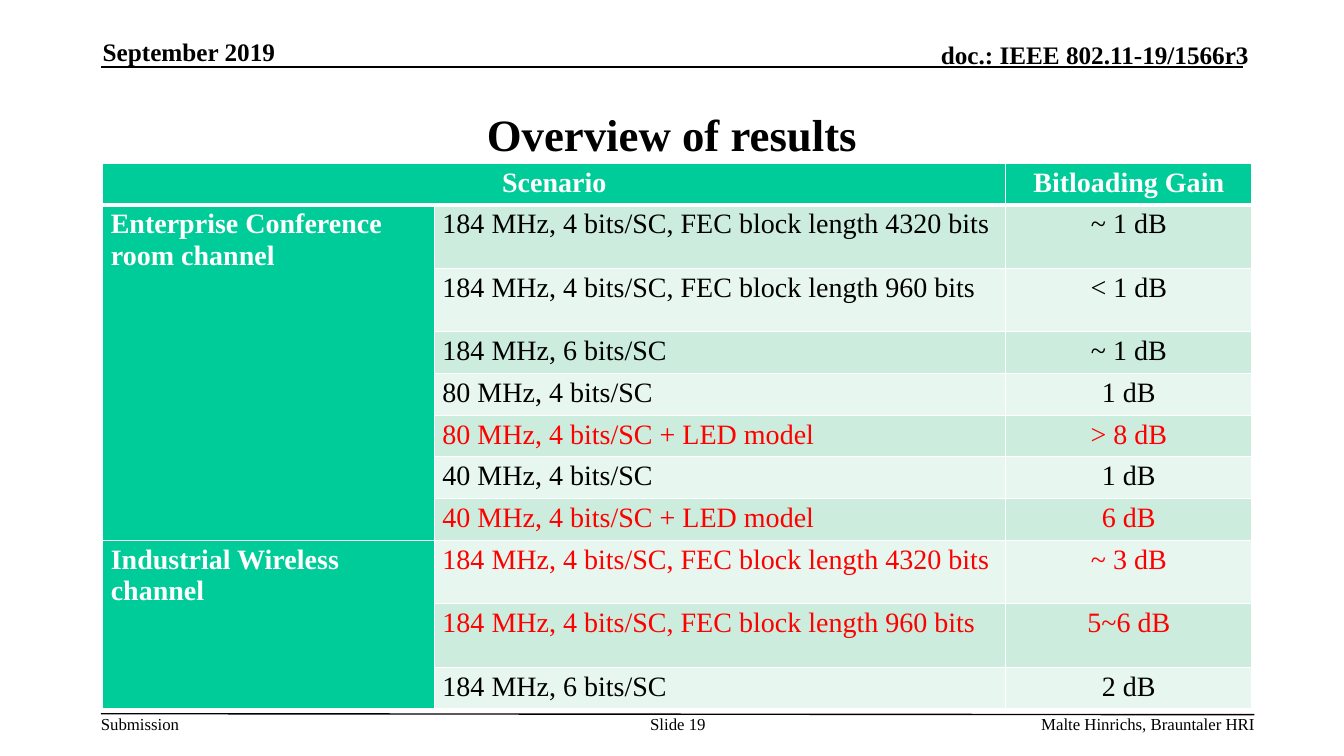
from lxml.etree import SubElement
from pptx import Presentation
from pptx.dml.color import RGBColor
from pptx.enum.shapes import MSO_CONNECTOR
from pptx.enum.text import MSO_ANCHOR, PP_ALIGN
from pptx.oxml.ns import qn
from pptx.util import Pt

FONT = "Times New Roman"
BLACK, WHITE, RED = "000000", "FFFFFF", "FF0000"
GREEN, BANDS = "00CC99", ("E7F6EF", "CCECDE")
LEFT, MID, RIGHT = PP_ALIGN.LEFT, PP_ALIGN.CENTER, PP_ALIGN.RIGHT
LOW, TALL = 27.9, 45.36
WIDTHS = (236.9, 408.2, 175.7)
LONG = "184 MHz, 4 bits/SC, FEC block length 4320 bits"
SHORT = "184 MHz, 4 bits/SC, FEC block length 960 bits"
GROUPS = (
    ("Enterprise Conference room channel", (
        (LONG, "~ 1 dB", BLACK, TALL),
        (SHORT, "< 1 dB", BLACK, TALL),
        ("184 MHz, 6 bits/SC", "~ 1 dB", BLACK, LOW),
        ("80 MHz, 4 bits/SC", "1 dB", BLACK, LOW),
        ("80 MHz, 4 bits/SC + LED model", "> 8 dB", RED, LOW),
        ("40 MHz, 4 bits/SC", "1 dB", BLACK, LOW),
        ("40 MHz, 4 bits/SC + LED model", "6 dB", RED, LOW),
    )),
    ("Industrial Wireless channel", (
        (LONG, "~ 3 dB", RED, TALL),
        (SHORT, "5~6 dB", RED, TALL),
        ("184 MHz, 6 bits/SC", "2 dB", BLACK, LOW),
    )),
)


def color(code):
    return RGBColor.from_string(code)


def write(frame, text, size, align=LEFT, bold=False, ink=BLACK):
    para = frame.paragraphs[0]
    para.alignment = align
    run = para.add_run()
    run.text = text
    run.font.name = FONT
    run.font.size = Pt(size)
    run.font.bold = bold
    run.font.color.rgb = color(ink)


def label(slide, text, area, size, align=LEFT, bold=False, anchor=MSO_ANCHOR.TOP):
    frame = slide.shapes.add_textbox(*map(Pt, area)).text_frame
    frame.word_wrap = True
    frame.vertical_anchor = anchor
    frame.margin_left = frame.margin_right = 0
    frame.margin_top = frame.margin_bottom = 0
    write(frame, text, size, align, bold)


def rule(slide, *ends):
    line = slide.shapes.add_connector(MSO_CONNECTOR.STRAIGHT, *map(Pt, ends))
    line.line.color.rgb = color(BLACK)
    line.line.width = Pt(1)
    SubElement(line._element.spPr, qn("a:effectLst"))


def border(cell, base):
    props = cell._tc.get_or_add_tcPr()
    for side, width in (("L", 1), ("R", 1), ("T", 1), ("B", base)):
        edge = SubElement(props, qn("a:ln" + side), w=str(Pt(width)))
        fill = SubElement(edge, qn("a:solidFill"))
        SubElement(fill, qn("a:srgbClr"), val=WHITE)


def paint(cell, fill, base=1):
    cell.margin_left = cell.margin_right = Pt(5.76)
    cell.margin_top = cell.margin_bottom = Pt(2.88)
    border(cell, base)
    cell.fill.solid()
    cell.fill.fore_color.rgb = color(fill)


def results(slide):
    rows = [row for name, part in GROUPS for row in part]
    highs = [LOW] + [row[3] for row in rows]
    area = map(Pt, (73.4, 116.6, sum(WIDTHS), sum(highs)))
    table = slide.shapes.add_table(len(highs), len(WIDTHS), *area).table
    table.first_row = table.horz_banding = False
    for col, width in zip(table.columns, WIDTHS):
        col.width = Pt(width)
    for row, high in zip(table.rows, highs):
        row.height = Pt(high)

    for col in range(3):
        paint(table.cell(0, col), GREEN, 3)
    table.cell(0, 0).merge(table.cell(0, 1))
    for col, text in ((0, "Scenario"), (2, "Bitloading Gain")):
        write(table.cell(0, col).text_frame, text, 20, MID, True, WHITE)

    for num, (case, gain, ink, high) in enumerate(rows, 1):
        paint(table.cell(num, 0), GREEN)
        for col, text, align in ((1, case, LEFT), (2, gain, MID)):
            cell = table.cell(num, col)
            paint(cell, BANDS[num % 2])
            write(cell.text_frame, text, 20, align, ink=ink)

    top = 1
    for name, part in GROUPS:
        head = table.cell(top, 0)
        head.merge(table.cell(top + len(part) - 1, 0))
        write(head.text_frame, name, 20, bold=True, ink=WHITE)
        top += len(part)


def main():
    deck = Presentation()
    deck.slide_width, deck.slide_height = Pt(960), Pt(540)
    slide = deck.slides.add_slide(deck.slide_layouts[6])
    low = MSO_ANCHOR.BOTTOM
    rule(slide, 72, 48, 888, 48)
    rule(slide, 72, 509.8, 896, 510.5)
    label(slide, "September 2019", (73.4, 26, 196.6, 21.6), 18, LEFT, True, low)
    label(slide, "doc.: IEEE 802.11-19/1566r3", (525, 28, 367, 21.6), 18, RIGHT, True, low)
    label(slide, "Overview of results", (72, 54, 816, 83.5), 32, MID, True, MSO_ANCHOR.MIDDLE)
    label(slide, "Submission", (72, 510, 57, 14.4), 12)
    label(slide, "Slide 19", (456.5, 510, 55.5, 28.8), 12, MID)
    label(slide, "Malte Hinrichs, Brauntaler HRI", (562.3, 510, 334, 14.4), 12, RIGHT)
    results(slide)
    deck.save("out.pptx")


if __name__ == "__main__":
    main()
